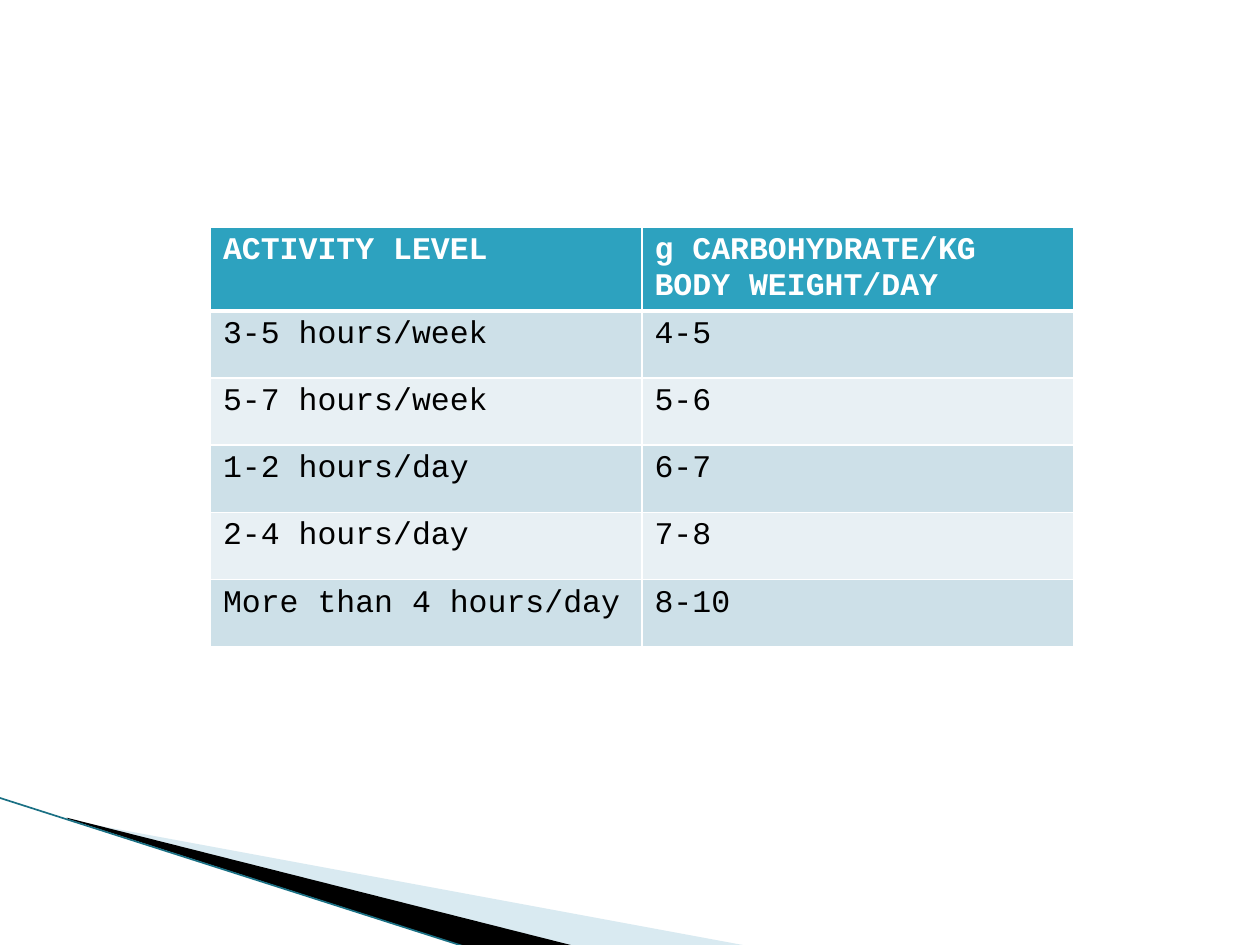
from lxml import etree
from pptx import Presentation
from pptx import util as u
from pptx.dml.color import RGBColor
from pptx.enum import shapes
from pptx.oxml import parse_xml
from pptx.oxml.ns import nsdecls, qn

WHITE = RGBColor(0xFF, 0xFF, 0xFF)
BLACK = RGBColor(0, 0, 0)
TEAL = RGBColor(0x2D, 0xA2, 0xBF)
DARK_TEAL = RGBColor(0x1A, 0x70, 0x84)
PALE_BLUE = RGBColor(0xA0, 0xCB, 0xDC)
BANDS = [RGBColor(0xCD, 0xE0, 0xE8), RGBColor(0xE8, 0xF0, 0xF4)]

ROWS = [
    ("ACTIVITY LEVEL", "g CARBOHYDRATE/KG BODY WEIGHT/DAY"),
    ("3-5 hours/week", "4-5"),
    ("5-7 hours/week", "5-6"),
    ("1-2 hours/day", "6-7"),
    ("2-4 hours/day", "7-8"),
    ("More than 4 hours/day", "8-10"),
]


def add_wedge(slide, frame, points, color):
    left, top, width, height = [u.Inches(length) for length in frame]
    corners = [(u.Inches(x), u.Inches(y)) for x, y in points]
    builder = slide.shapes.build_freeform(*corners[0])
    builder.add_line_segments(corners[1:], close=True)
    wedge = builder.convert_to_shape()
    outline = next(wedge._element.iter(qn("a:path")))
    outline.set("w", str(width))
    outline.set("h", str(height))
    for point in outline.iter(qn("a:pt")):
        point.set("x", str(int(point.get("x")) + wedge.left - left))
        point.set("y", str(int(point.get("y")) + wedge.top - top))
    wedge.left, wedge.top, wedge.width, wedge.height = left, top, width, height
    wedge.shadow.inherit = False
    wedge.fill.solid()
    wedge.fill.fore_color.rgb = color
    wedge.line.fill.background()
    return wedge


def add_border(cell, side, points):
    cell._tc.get_or_add_tcPr().append(parse_xml(
        f'<a:{side} {nsdecls("a")} w="{u.Pt(points)}"><a:solidFill>'
        f'<a:srgbClr val="{WHITE}"/></a:solidFill></a:{side}>'))


deck = Presentation()
deck.slide_width, deck.slide_height = u.Inches(10), u.Inches(7.5)
slide = deck.slides.add_slide(deck.slide_layouts[6])

pale_wedge = add_wedge(
    slide, (0.78, 5.47, 4.16, 1.58),
    [(0.55, 6.51), (5.95, 7.51), (4.56, 7.51), (0.55, 6.5)], PALE_BLUE)
pale_color = pale_wedge._element.spPr.find(qn("a:solidFill"))[0]
etree.SubElement(pale_color, qn("a:alpha"), val="40000")
add_wedge(
    slide, (-0.06, 6.33, 4.16, 0.92),
    [(0.53, 6.49), (4.57, 7.51), (3.72, 7.52), (0.54, 6.5)], BLACK)

edge = slide.shapes.add_connector(
    shapes.MSO_CONNECTOR.STRAIGHT,
    u.Inches(-0.01), u.Inches(6.33), u.Inches(3.71), u.Inches(7.52))
edge.line.color.rgb = DARK_TEAL
edge.line.width = u.Pt(0.95)
etree.SubElement(edge._element.spPr, qn("a:effectLst"))

intake = slide.shapes.add_table(
    len(ROWS), 2, u.Inches(1.67), u.Inches(1.8), u.Inches(6.85), u.Inches(3.2)).table

for r, labels in enumerate(ROWS):
    for c, label in enumerate(labels):
        cell = intake.cell(r, c)
        add_border(cell, "lnL", 1)
        add_border(cell, "lnR", 1)
        add_border(cell, "lnT", 3 if r == 1 else 1)
        add_border(cell, "lnB", 3 if r == 0 else 1)
        cell.fill.solid()
        cell.fill.fore_color.rgb = TEAL if r == 0 else BANDS[(r - 1) % 2]
        cell.text = label
        font = cell.text_frame.paragraphs[0].font
        font.name = "Courier New"
        font.size = u.Pt(18)
        font.bold = r == 0
        font.color.rgb = WHITE if r == 0 else BLACK

deck.save("out.pptx")
